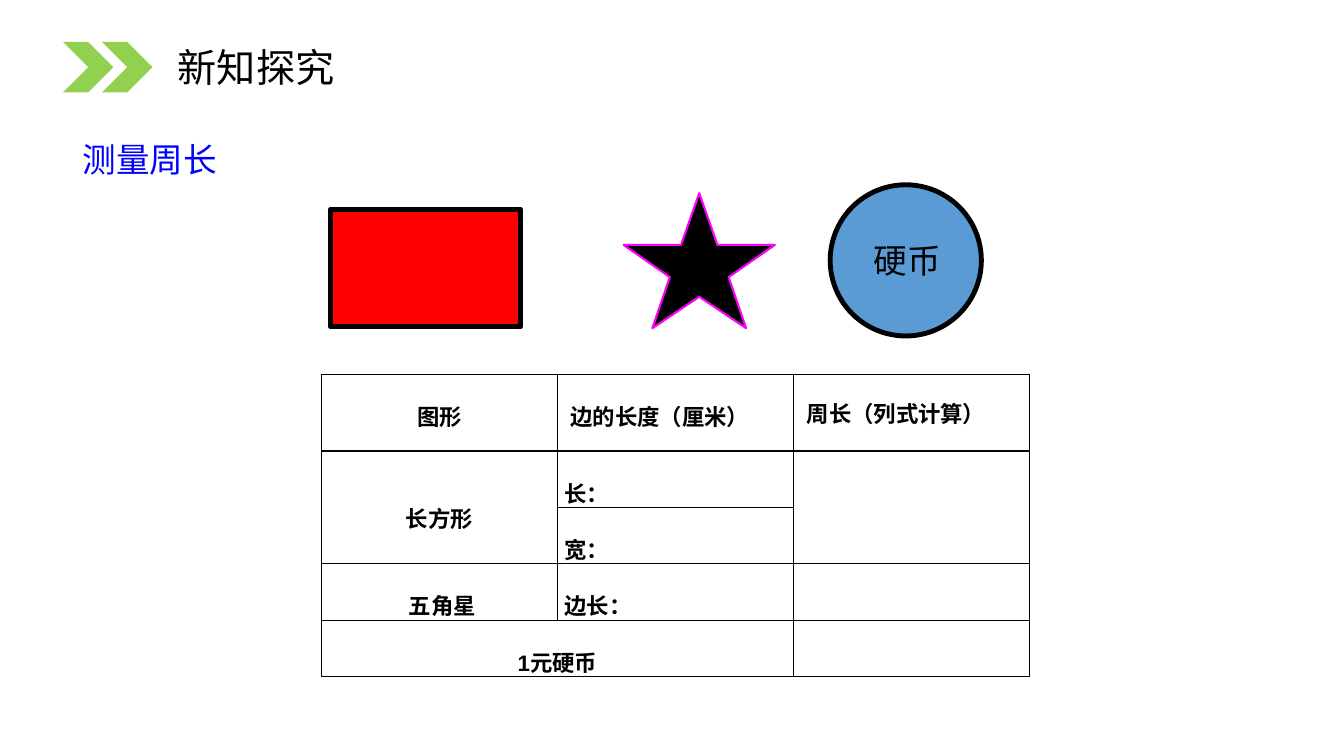
from lxml.etree import SubElement
from pptx import Presentation
from pptx.dml.color import RGBColor
from pptx.enum.shapes import MSO_SHAPE as Preset
from pptx.enum.text import MSO_ANCHOR as Anchor, PP_ALIGN as Align
from pptx.oxml.ns import qn
from pptx.util import Pt

BLACK = "000000"
BORDER = "080000"


def rgb(code):
    """Return the colour for a hex string."""
    return RGBColor.from_string(code)


def paint(shape, fill, outline=None, weight=0):
    """Give a shape its fill and outline, without a shadow."""
    shape.shadow.inherit = False
    shape.fill.solid()
    shape.fill.fore_color.rgb = rgb(fill)
    if outline:
        shape.line.color.rgb = rgb(outline)
        shape.line.width = Pt(weight)
    else:
        shape.line.fill.background()


def write(frame, words, size, color=BLACK, bold=False, align=Align.LEFT):
    """Write one run into the first paragraph of a text frame."""
    paragraph = frame.paragraphs[0]
    paragraph.alignment = align
    run = paragraph.add_run()
    run.text = words
    run.font.name = "Arial"
    run.font.size = Pt(size)
    run.font.bold = bold
    run.font.color.rgb = rgb(color)


def add_label(slide, box, words, size, color=BLACK):
    """Place a vertically centred line of text in a box."""
    frame = slide.shapes.add_textbox(*map(Pt, box)).text_frame
    frame.word_wrap = True
    frame.vertical_anchor = Anchor.MIDDLE
    write(frame, words, size, color)


def add_preset(slide, preset, box, fill, outline=None, weight=0):
    """Place a painted preset shape in a box."""
    shape = slide.shapes.add_shape(preset, *map(Pt, box))
    paint(shape, fill, outline, weight)


def add_header(slide, left, top):
    """Draw the two chevrons, the lesson title and the subtitle."""
    for step in range(2):
        add_preset(slide, Preset.CHEVRON, (left + 28 * step, top, 36, 36), "92D050")
    add_label(slide, (left + 75, top + 1.5, 402, 33), "新知探究", 28)
    add_label(slide, (left + 7, top + 65.5, 252, 36), "测量周长", 24, "0000FF")


def add_star(slide, center, top):
    """Draw the five-pointed star from one half and its mirror."""
    half = [(0, 0), (13, 37), (54, 37), (21, 60), (33.5, 96.5), (0, 74)]
    mirrored = [(-x, y) for x, y in half[-2:0:-1]]
    points = [(Pt(center + x), Pt(top + y)) for x, y in half + mirrored]
    outline = slide.shapes.build_freeform(*points[0])
    outline.add_line_segments(points[1:], close=True)
    paint(outline.convert_to_shape(), BLACK, "FF00FF", 1.5)


def add_figures(slide, left, top):
    """Draw the rectangle, the star and the coin in a row."""
    add_preset(slide, Preset.RECTANGLE, (left, top + 17.5, 136, 84), "FF0000", BLACK, 3.5)
    add_star(slide, left + 263.5, top + 6)
    add_preset(slide, Preset.OVAL, (left + 357, top, 108, 108), "5B9BD5", BLACK, 3.5)
    add_label(slide, (left + 381, top + 36, 68, 36), "硬币", 24)


def style_cell(cell):
    """Clear a cell's fill and draw its four borders."""
    properties = cell._tc.get_or_add_tcPr()
    for side in ("a:lnL", "a:lnR", "a:lnT", "a:lnB"):
        border = SubElement(properties, qn(side), w=str(Pt(1)))
        fill = SubElement(border, qn("a:solidFill"))
        SubElement(fill, qn("a:srgbClr"), val=BORDER)
    cell.fill.background()


def add_record_table(slide, left, top):
    """Build the table for recording side lengths and perimeters."""
    heights = [54.7] + [40.3] * 4
    column_width = 168.7
    record = slide.shapes.add_table(
        len(heights), 3, Pt(left), Pt(top), Pt(3 * column_width), Pt(sum(heights))
    ).table
    record.first_row = record.horz_banding = False
    for column in record.columns:
        column.width = Pt(column_width)
    for row, height in zip(record.rows, heights):
        row.height = Pt(height)
    for cell in record.iter_cells():
        style_cell(cell)
    for first, last in [((1, 0), (2, 0)), ((1, 2), (2, 2)), ((4, 0), (4, 1))]:
        record.cell(*first).merge(record.cell(*last))

    entries = [
        (0, 0, "图形", Align.CENTER, 0, 18),
        (0, 1, "边的长度（厘米）", Align.LEFT, 4.4, 18),
        (0, 2, "周长（列式计算）", Align.LEFT, 4.4, 16),
        (1, 0, "长方形", Align.CENTER, 0, 36),
        (1, 1, "长：", Align.LEFT, 0, 18),
        (2, 1, "宽：", Align.LEFT, 0, 18),
        (3, 0, "五角星", Align.CENTER, 4.4, 18),
        (3, 1, "边长：", Align.LEFT, 0, 18),
        (4, 0, "1元硬币", Align.CENTER, 0, 18),
    ]
    for row, column, words, align, indent, drop in entries:
        cell = record.cell(row, column)
        cell.margin_left, cell.margin_right = Pt(5 + indent), Pt(5)
        cell.margin_top, cell.margin_bottom = Pt(drop), Pt(0)
        write(cell.text_frame, words, 16, bold=True, align=align)


def main():
    """Build the lesson slide and save it."""
    deck = Presentation()
    deck.slide_width, deck.slide_height = Pt(960), Pt(540)
    slide = deck.slides.add_slide(deck.slide_layouts[6])
    add_header(slide, 45, 30)
    add_figures(slide, 236, 132)
    add_record_table(slide, 229.5, 267.5)
    deck.save("out.pptx")


if __name__ == "__main__":
    main()
